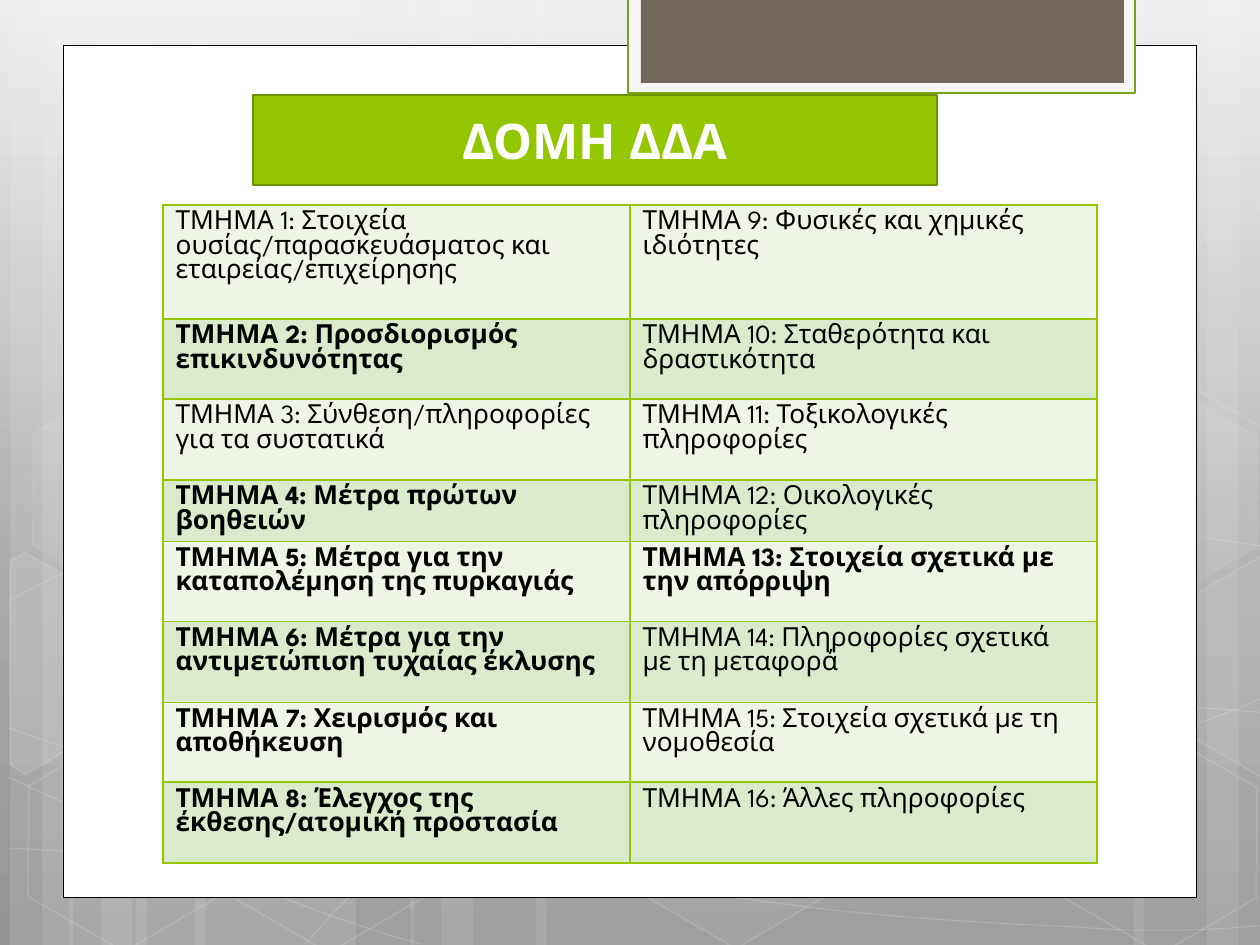
"""Build the slide listing the sixteen sections of a safety data sheet."""
import math

from lxml import etree
from pptx import Presentation, util as u
from pptx.dml.color import RGBColor
from pptx.enum import shapes, text
from pptx.oxml import ns

PX = 914400 // 126
WIDTH, HEIGHT = 1260, 945
FONT = "League Spartan"
COLORS = {
    "white": "FFFFFF", "black": "000000", "mist": "F5F5F5", "brown": "71685A",
    "green": "94C600", "leaf": "74A510", "moss": "6D9200",
    "pale": "EEF5E7", "soft": "DCEACC",
}
BACKGROUND = [(0, "EEEEEE"), (62, "AAAAAA"), (100, "959595")]
TITLE = "ΔΟΜΗ ΔΔΑ"
LEFT_SECTIONS = [
    ("ΤΜΗΜΑ 1: Στοιχεία ουσίας/παρασκευάσματος και εταιρείας/επιχείρησης", False),
    ("ΤΜΗΜΑ 2: Προσδιορισμός επικινδυνότητας", True),
    ("ΤΜΗΜΑ 3: Σύνθεση/πληροφορίες για τα συστατικά", False),
    ("ΤΜΗΜΑ 4: Μέτρα πρώτων βοηθειών", True),
    ("ΤΜΗΜΑ 5: Μέτρα για την καταπολέμηση της πυρκαγιάς", True),
    ("ΤΜΗΜΑ 6: Μέτρα για την αντιμετώπιση τυχαίας έκλυσης", True),
    ("ΤΜΗΜΑ 7: Χειρισμός και αποθήκευση", True),
    ("ΤΜΗΜΑ 8: Έλεγχος της έκθεσης/ατομική προστασία", True),
]
RIGHT_SECTIONS = [
    ("ΤΜΗΜΑ 9: Φυσικές και χημικές ιδιότητες", False),
    ("ΤΜΗΜΑ 10: Σταθερότητα και δραστικότητα", False),
    ("ΤΜΗΜΑ 11: Τοξικολογικές πληροφορίες", False),
    ("ΤΜΗΜΑ 12: Οικολογικές πληροφορίες", False),
    ("ΤΜΗΜΑ 13: Στοιχεία σχετικά με την απόρριψη", True),
    ("ΤΜΗΜΑ 14: Πληροφορίες σχετικά με τη μεταφορά", False),
    ("ΤΜΗΜΑ 15: Στοιχεία σχετικά με τη νομοθεσία", False),
    ("ΤΜΗΜΑ 16: Άλλες πληροφορίες", False),
]
ROW_HEIGHTS = [114, 80, 81, 58, 80, 81, 80, 81]
COLUMN_WIDTH = 467
BARS = [(136, 220, 0), (10, 63, 0), (42, 105, 0), (195, 220, 0), (69, 63, 0),
        (101, 105, 0), (924, 220, 180), (1207, 63, 180), (1134, 105, 180),
        (536, 388, 0), (410, 63, 0), (441, 105, 0)]
CURVES = [
    [(9, 848), (77, 852), (145, 856), (239, 854), (334, 853), (451, 850), (577, 838),
     (703, 825), (882, 801), (998, 777), (1113, 753), (1231, 716), (1269, 694)],
    [(9, 601), (45, 581), (82, 562), (152, 543), (224, 524), (326, 496), (437, 488),
     (549, 479), (685, 478), (824, 488), (963, 497), (1193, 537), (1269, 547)],
    [(8, 777), (160, 847), (311, 916), (421, 944)],
    [(9, 728), (48, 742), (88, 756), (161, 776), (234, 795), (344, 827), (450, 848),
     (554, 869), (687, 892), (791, 905), (896, 919), (1008, 924), (1075, 927),
     (1140, 932), (1158, 930), (1191, 930), (1223, 929), (1246, 927), (1269, 925)],
    [(305, 944), (328, 919), (350, 893), (381, 871), (411, 848), (454, 823), (489, 805),
     (524, 788), (546, 779), (592, 767), (638, 754), (722, 737), (766, 728),
     (811, 719), (818, 719), (857, 717), (896, 713), (958, 709), (1000, 708),
     (1045, 707), (1116, 708), (1116, 708), (1144, 708), (1173, 708), (1201, 708),
     (1223, 709), (1245, 711), (1256, 712), (1268, 713), (1264, 712), (1268, 713)],
]
HEXAGONS = [(421, 45, 4, 8), (626, 742, 6, 12), (14, 745, 0, 12), (18, 393, 7, 8),
            (219, 746, 0, 12), (949, 571, 10, 12), (1051, 747, 0, 12), (1051, 396, 7, 8)]
LEFT_CUT = [(10, 561), (24, 552), (121, 607), (120, 718), (25, 774), (10, 765)]
RIGHT_CUT = [(1167, 611), (1261, 556), (1271, 562), (1271, 772), (1263, 777), (1167, 722)]
CUT_HEXAGONS = [
    (LEFT_CUT, (45, 674), 10),
    (RIGHT_CUT, (1241, 655), 4),
    ([(x, y - 350) for x, y in RIGHT_CUT], (1241, 305), 0),
]


def color(name):
    return RGBColor.from_string(COLORS[name])


def add_xml(parent, tag, **attributes):
    return etree.SubElement(parent, ns.qn(tag), attributes)


def paint(shape, fill=None, line=None, width=1, fill_alpha=100, line_alpha=100):
    shape.shadow.inherit = False
    for name, part, alpha, place in ((fill, shape.fill, fill_alpha, "./"),
                                     (line, shape.line.fill, line_alpha, "./a:ln/")):
        if not name or not alpha:
            part.background()
            continue
        part.solid()
        part.fore_color.rgb = color(name)
        if alpha < 100:
            for node in shape.element.spPr.xpath(place + "a:solidFill/a:srgbClr"):
                add_xml(node, "a:alpha", val=str(alpha * 1000))
    if line:
        shape.line.width = u.Pt(width)
    return shape


def add_preset(page, kind, left, top, width, height):
    return page.shapes.add_shape(kind, *(side * PX for side in (left, top, width, height)))


def add_box(page, *place, **style):
    return paint(add_preset(page, shapes.MSO_SHAPE.RECTANGLE, *place), **style)


def add_outline(page, points, close):
    builder = page.shapes.build_freeform(*points[0], scale=PX)
    builder.add_line_segments(points[1:], close=close)
    return builder.convert_to_shape()


def add_curve(page, controls):
    curve = add_outline(page, controls, False)
    segments = curve.element.spPr.xpath(".//a:lnTo")
    outline = segments[0].getparent()
    for start in range(0, len(segments), 3):
        bend = add_xml(outline, "a:cubicBezTo")
        for segment in segments[start:start + 3]:
            bend.append(segment[0])
            outline.remove(segment)
    return curve


def turn(point, center, degrees):
    dx, dy = point[0] - center[0], point[1] - center[1]
    cos, sin = math.cos(math.radians(degrees)), math.sin(math.radians(degrees))
    return center[0] + dx * cos - dy * sin, center[1] + dx * sin + dy * cos


def write(frame, words, size, name, bold):
    para = frame.paragraphs[0]
    para.text = words
    font = para.font
    font.name, font.size, font.bold = FONT, u.Pt(size), bold
    font.color.rgb = color(name)
    return para


def add_background(page):
    fill = page.background.fill
    fill.gradient()
    fill.gradient_angle = 270
    stops = page.element.xpath(".//p:bgPr//a:gsLst")[0]
    for stop in list(stops):
        stops.remove(stop)
    for place, value in BACKGROUND:
        add_xml(add_xml(stops, "a:gs", pos=str(place * 1000)), "a:srgbClr", val=value)


def add_decoration(page):
    for left, width, rotation in BARS:
        bar = add_box(page, left, 0, width, HEIGHT, fill="white", fill_alpha=10)
        bar.rotation = rotation
    for controls in CURVES:
        paint(add_curve(page, controls), line="white", width=0.5, line_alpha=20)
    for left, top, fill_alpha, line_alpha in HEXAGONS:
        hexagon = add_preset(page, shapes.MSO_SHAPE.HEXAGON, left, top, 220, 192)
        hexagon.adjustments[0], hexagon.adjustments[1] = 0.285, 1.155
        hexagon.rotation = 30
        paint(hexagon, "white", "white", 1, fill_alpha, line_alpha)
    for points, center, fill_alpha in CUT_HEXAGONS:
        cut = add_outline(page, [turn(point, center, -30) for point in points], True)
        cut.rotation = 30
        paint(cut, "white", "white", 1, fill_alpha, 12)


def add_sections(page):
    frame = page.shapes.add_table(len(ROW_HEIGHTS), 2, 163 * PX, 205 * PX,
                                  2 * COLUMN_WIDTH * PX, sum(ROW_HEIGHTS) * PX)
    table = frame.table
    table.first_row = table.horz_banding = False
    for column, sections in enumerate((LEFT_SECTIONS, RIGHT_SECTIONS)):
        table.columns[column].width = COLUMN_WIDTH * PX
        for row, (words, bold) in enumerate(sections):
            table.rows[row].height = ROW_HEIGHTS[row] * PX
            cell = table.cell(row, column)
            write(cell.text_frame, words, 15, "black", bold)
            properties = cell._tc.get_or_add_tcPr()
            for side in "LRTB":
                border = add_xml(properties, f"a:ln{side}", w=str(u.Pt(1)))
                add_xml(add_xml(border, "a:solidFill"), "a:srgbClr", val=COLORS["green"])
            cell.fill.solid()
            cell.fill.fore_color.rgb = color("soft" if row % 2 else "pale")


def main():
    deck = Presentation()
    deck.slide_width, deck.slide_height = WIDTH * PX, HEIGHT * PX
    page = deck.slides.add_slide(deck.slide_layouts[6])
    add_background(page)
    add_decoration(page)
    add_box(page, 63, 45, 1134, 853, fill="white", line="black", width=0.5)
    add_box(page, 628, -3, 507, 96, fill="mist", line="leaf", width=1.25)
    add_box(page, 641, -3, 483, 86, fill="brown")
    add_sections(page)
    title = add_box(page, 253, 95, 684, 90, fill="green", line="moss", width=1.25)
    title.text_frame.vertical_anchor = text.MSO_ANCHOR.MIDDLE
    write(title.text_frame, TITLE, 28, "white", True).alignment = text.PP_ALIGN.CENTER
    deck.save("out.pptx")


if __name__ == "__main__":
    main()
